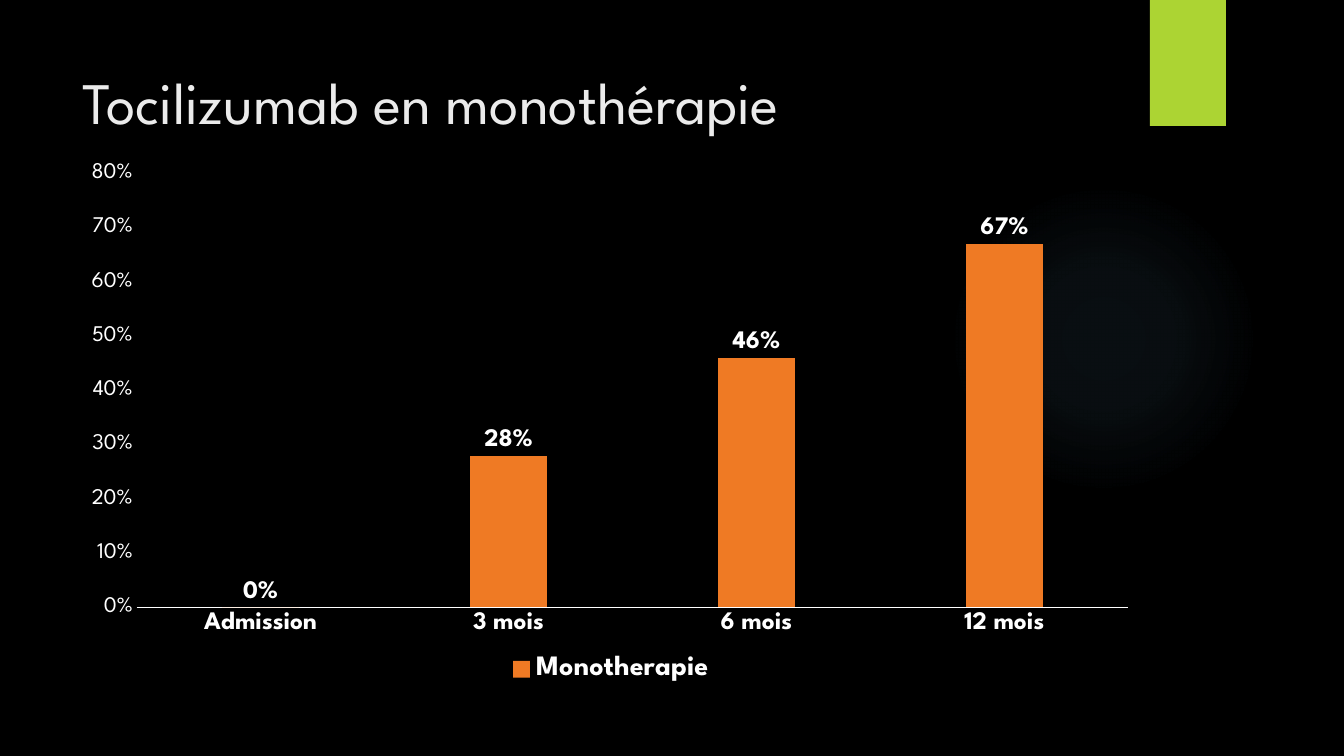
from lxml import etree
from pptx import Presentation
from pptx.chart.data import CategoryChartData
from pptx.dml.color import RGBColor
from pptx.enum.chart import (XL_CHART_TYPE as CHART, XL_LABEL_POSITION as LABEL,
                             XL_LEGEND_POSITION as LEGEND, XL_TICK_MARK as TICK)
from pptx.enum.shapes import MSO_SHAPE as SHAPE
from pptx.enum.text import MSO_ANCHOR as ANCHOR, PP_ALIGN as ALIGN
from pptx.oxml import parse_xml
from pptx.oxml.ns import qn
from pptx.util import Pt

TITLE = "Tocilizumab en monothérapie"
SERIES = "Monotherapie"
RATES = {"Admission": 0, "3 mois": 0.28, "6 mois": 0.46, "12 mois": 0.67}
FONT = "League Spartan"
BLACK, WHITE, PALE = "000000", "FFFFFF", "EBEBEB"
GREEN, ORANGE, BLUE = "ACD433", "EF7A24", "7AC4F0"
GLOW_STOPS = [(0, 7), (36, 6), (69, 0)]
WIDTH, HEIGHT = 1344, 756
GLOW_BOX = (949, 184, 310, 310)
TAB_BOX = (1150, 0, 76, 126)
TITLE_BOX = (72, 50, 1037, 102)
CHART_BOX = (72, 152, 1078, 536)
PLOT = {"x": 0.06, "y": 0.04, "w": 0.92, "h": 0.81}
DRAWING = "http://schemas.openxmlformats.org/drawingml/2006/main"


def px(*lengths):
    """Turn px lengths into EMU."""
    return [round(n * 914400 / 100.8) for n in lengths]


def rgb(value):
    """Turn a hex string into a colour."""
    return RGBColor.from_string(value)


def style(font, size, color=WHITE, bold=False):
    """Format a font."""
    font.name, font.size, font.bold = FONT, Pt(size), bold
    font.color.rgb = rgb(color)


def add_text(sp, text, size, color=WHITE, bold=False, anchor=ANCHOR.MIDDLE):
    """Write one formatted line into a shape."""
    tf = sp.text_frame
    tf.word_wrap, tf.vertical_anchor = True, anchor
    p = tf.paragraphs[0]
    p.alignment = ALIGN.LEFT
    r = p.add_run()
    r.text = text
    style(r.font, size, color, bold)


def add_block(s, kind, box, color):
    """Add a plain filled shape."""
    sp = s.shapes.add_shape(kind, *px(*box))
    sp.shadow.inherit = False
    sp.fill.solid()
    sp.fill.fore_color.rgb = rgb(color)
    sp.line.fill.background()
    return sp


def add_glow(s):
    """Add the soft radial glow."""
    sp = add_block(s, SHAPE.OVAL, GLOW_BOX, BLUE)
    stops = "".join(
        f'<a:gs pos="{pos * 1000}"><a:srgbClr val="{BLUE}">'
        f'<a:alpha val="{alpha * 1000}"/></a:srgbClr></a:gs>'
        for pos, alpha in GLOW_STOPS)
    grad = parse_xml(
        f'<a:gradFill xmlns:a="{DRAWING}" rotWithShape="1"><a:gsLst>{stops}</a:gsLst>'
        '<a:path path="circle"><a:fillToRect l="50000" t="50000" r="50000" b="50000"/>'
        '</a:path></a:gradFill>')
    props = sp._element.spPr
    props.replace(props.find(qn("a:solidFill")), grad)


def place_plot(chart):
    """Fix the inner plot area."""
    area = chart._chartSpace.chart.plotArea
    for old in area.findall(qn("c:layout")):
        area.remove(old)
    layout = etree.Element(qn("c:layout"))
    area.insert(0, layout)
    manual = etree.SubElement(layout, qn("c:manualLayout"))
    settings = {"layoutTarget": "inner", "xMode": "edge", "yMode": "edge", **PLOT}
    for name, value in settings.items():
        etree.SubElement(manual, qn(f"c:{name}")).set("val", str(value))


def add_rates(s):
    """Add the column chart."""
    data = CategoryChartData(number_format="0%")
    data.categories = list(RATES)
    data.add_series(SERIES, list(RATES.values()))
    chart = s.shapes.add_chart(CHART.COLUMN_CLUSTERED, *px(*CHART_BOX), data).chart
    style(chart.font, 10)
    chart.has_title = False
    chart.has_legend = True
    legend = chart.legend
    legend.position, legend.include_in_layout = LEGEND.BOTTOM, False
    style(legend.font, 20, bold=True)

    cat, val = chart.category_axis, chart.value_axis
    for axis in (cat, val):
        axis.major_tick_mark = axis.minor_tick_mark = TICK.NONE
        axis.has_major_gridlines = False
    style(cat.tick_labels.font, 18, bold=True)
    cat.format.line.color.rgb = rgb(WHITE)
    cat.format.line.width = Pt(0.75)
    style(val.tick_labels.font, 16)
    val.tick_labels.number_format = "0%"
    val.tick_labels.number_format_is_linked = False
    val.format.line.fill.background()
    val.minimum_scale, val.maximum_scale, val.major_unit = 0, 0.8, 0.1

    plot = chart.plots[0]
    plot.gap_width, plot.overlap, plot.vary_by_categories = 219, -27, False
    bars = plot.series[0]
    bars.format.fill.solid()
    bars.format.fill.fore_color.rgb = rgb(ORANGE)
    labels = bars.data_labels
    labels.show_value, labels.position = True, LABEL.OUTSIDE_END
    labels.number_format, labels.number_format_is_linked = "0%", False
    style(labels.font, 18, bold=True)
    place_plot(chart)


def main():
    """Build the slide and save it."""
    prs = Presentation()
    prs.slide_width, prs.slide_height = px(WIDTH, HEIGHT)
    s = prs.slides.add_slide(prs.slide_layouts[5])
    s.background.fill.solid()
    s.background.fill.fore_color.rgb = rgb(BLACK)
    add_glow(s)
    add_block(s, SHAPE.RECTANGLE, TAB_BOX, GREEN)
    title = s.shapes.title
    title.left, title.top, title.width, title.height = px(*TITLE_BOX)
    add_text(title, TITLE, 42, color=PALE)
    add_rates(s)
    prs.save("out.pptx")


if __name__ == "__main__":
    main()
